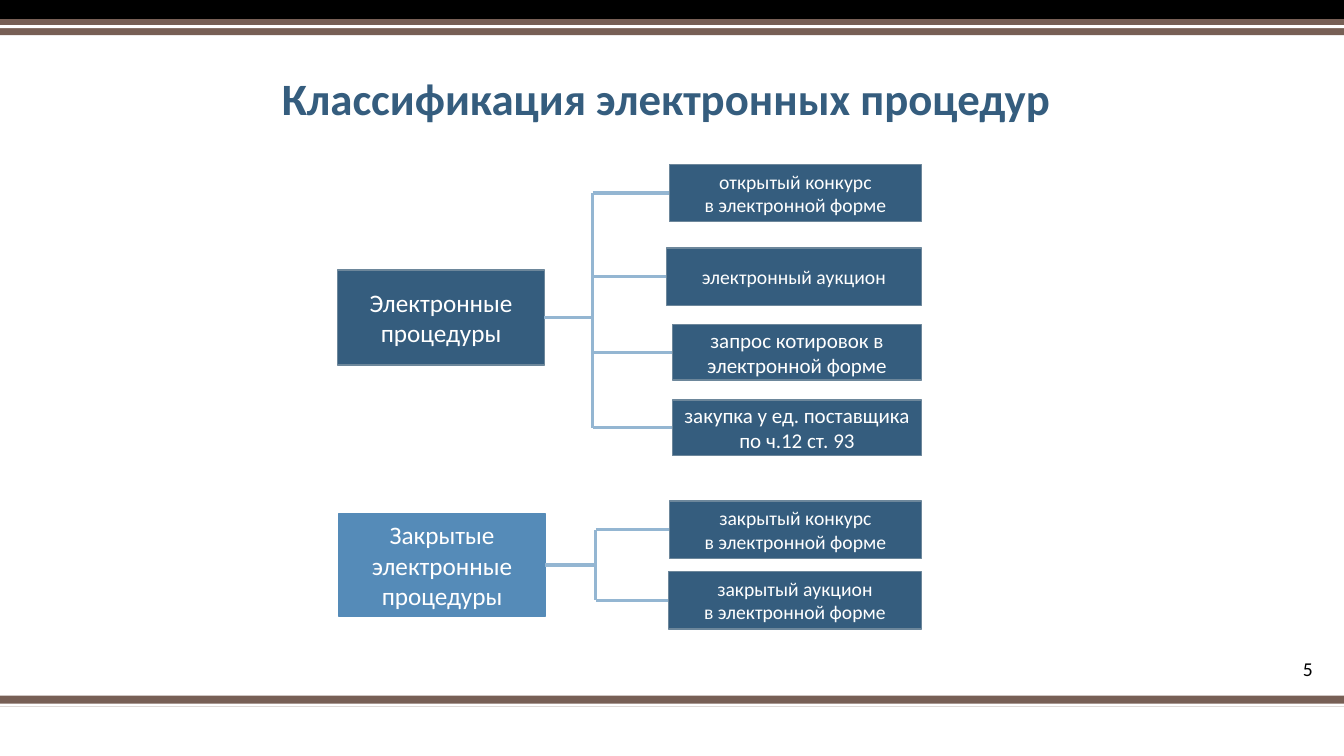
from pptx import Presentation
from pptx.dml.color import RGBColor
from pptx.enum.shapes import MSO_CONNECTOR, MSO_SHAPE
from pptx.enum.text import MSO_ANCHOR, PP_ALIGN
from pptx.oxml.ns import qn
from pptx.util import Inches, Pt
from lxml import etree

RECT = MSO_SHAPE.RECTANGLE
STRAIGHT = MSO_CONNECTOR.STRAIGHT
MIDDLE, BOTTOM = MSO_ANCHOR.MIDDLE, MSO_ANCHOR.BOTTOM
CENTER, RIGHT = PP_ALIGN.CENTER, PP_ALIGN.RIGHT

BLACK = RGBColor(0x00, 0x00, 0x00)
WHITE = RGBColor(0xFF, 0xFF, 0xFF)
BROWN = RGBColor(0x77, 0x5F, 0x55)
NAVY = RGBColor(0x35, 0x5D, 0x7E)
BLUE = RGBColor(0x55, 0x8B, 0xB8)
BORDER = RGBColor(0x6D, 0x87, 0x9B)
LINK = RGBColor(0x94, 0xB6, 0xD2)

LEAF_RIGHT = 9.14
ROOT_W = 2.05


def add_rect(left, top, width, height, fill, border=None):
    sp = slide.shapes.add_shape(RECT, Inches(left), Inches(top), Inches(width), Inches(height))
    sp.shadow.inherit = False
    sp.fill.solid()
    sp.fill.fore_color.rgb = fill
    if border is None:
        sp.line.fill.background()
    else:
        sp.line.color.rgb = border
        sp.line.width = Pt(1)
    return sp


def write_text(sp, text, size, color=WHITE, align=CENTER, anchor=MIDDLE, bold=False, spacing=None):
    """Fill a shape with text, one paragraph per line."""
    tf = sp.text_frame
    tf.word_wrap = True
    tf.vertical_anchor = anchor
    tf.text = text
    for p in tf.paragraphs:
        p.alignment = align
        p.line_spacing = spacing
        font = p.runs[0].font
        for name, value in {"name": "Calibri", "size": Pt(size), "bold": bold}.items():
            setattr(font, name, value)
        font.color.rgb = color


prs = Presentation()
prs.slide_width, prs.slide_height = Inches(13.33), Inches(7.5)
slide = prs.slides.add_slide(prs.slide_layouts[6])

# Bands across the top and bottom
for top, height, color in [
    (6.9, 0.11, BROWN), (6.98, 0.03, WHITE),
    (0, 0.19, BLACK), (0.19, 0.16, BROWN), (0.25, 0.03, WHITE),
]:
    add_rect(0, top, 13.33, height, color)

title = slide.shapes.add_textbox(Inches(1.61), Inches(0.12), Inches(10), Inches(1.17))
write_text(title, "Классификация электронных процедур", 32, NAVY, anchor=BOTTOM, bold=True, spacing=0.9)

number = slide.shapes.add_textbox(Inches(12.1), Inches(6.51), Inches(1.02), Inches(0.25))
write_text(number, "5", 14, BLACK, align=RIGHT)

# Root: text, left, top, height, fill; trunk x; leaves: text, left, top, height, size
trees = [
    (("Электронные процедуры", 3.35, 2.68, 0.94, NAVY), 5.88, [
        ("открытый конкурс\nв электронной форме", 6.64, 1.63, 0.57, 14),
        ("электронный аукцион", 6.61, 2.46, 0.57, 14),
        ("запрос котировок в электронной форме", 6.67, 3.22, 0.55, 15),
        ("закупка у ед. поставщика по ч.12 ст. 93", 6.67, 3.97, 0.55, 15),
    ]),
    (("Закрытые электронные процедуры", 3.36, 5.1, 1.01, BLUE), 5.91, [
        ("закрытый конкурс\nв электронной форме", 6.64, 4.97, 0.57, 14),
        ("закрытый аукцион\nв электронной форме", 6.63, 5.67, 0.57, 14),
    ]),
]

for (text, left, top, height, fill), trunk_x, leaves in trees:
    root = add_rect(left, top, ROOT_W, height, fill, BORDER if fill == NAVY else fill)
    write_text(root, text, 18)
    x = Inches(trunk_x)
    root_y = root.top + root.height // 2
    stem = slide.shapes.add_connector(STRAIGHT, root.left + root.width, root_y, x, root_y)
    stem.begin_connect(root, 3)
    links, leaf_ys = [stem], []

    for text, left, top, height, size in leaves:
        leaf = add_rect(left, top, LEAF_RIGHT - left, height, NAVY, BORDER)
        write_text(leaf, text, size)
        y = leaf.top + leaf.height // 2
        branch = slide.shapes.add_connector(STRAIGHT, x, y, leaf.left, y)
        branch.end_connect(leaf, 1)
        links.append(branch)
        leaf_ys.append(y)

    links.append(slide.shapes.add_connector(STRAIGHT, x, leaf_ys[0], x, leaf_ys[-1]))
    for link in links:
        link.line.color.rgb = LINK
        link.line.width = Pt(2.25)
        etree.SubElement(link._element.spPr, qn("a:effectLst"))

prs.save("out.pptx")
